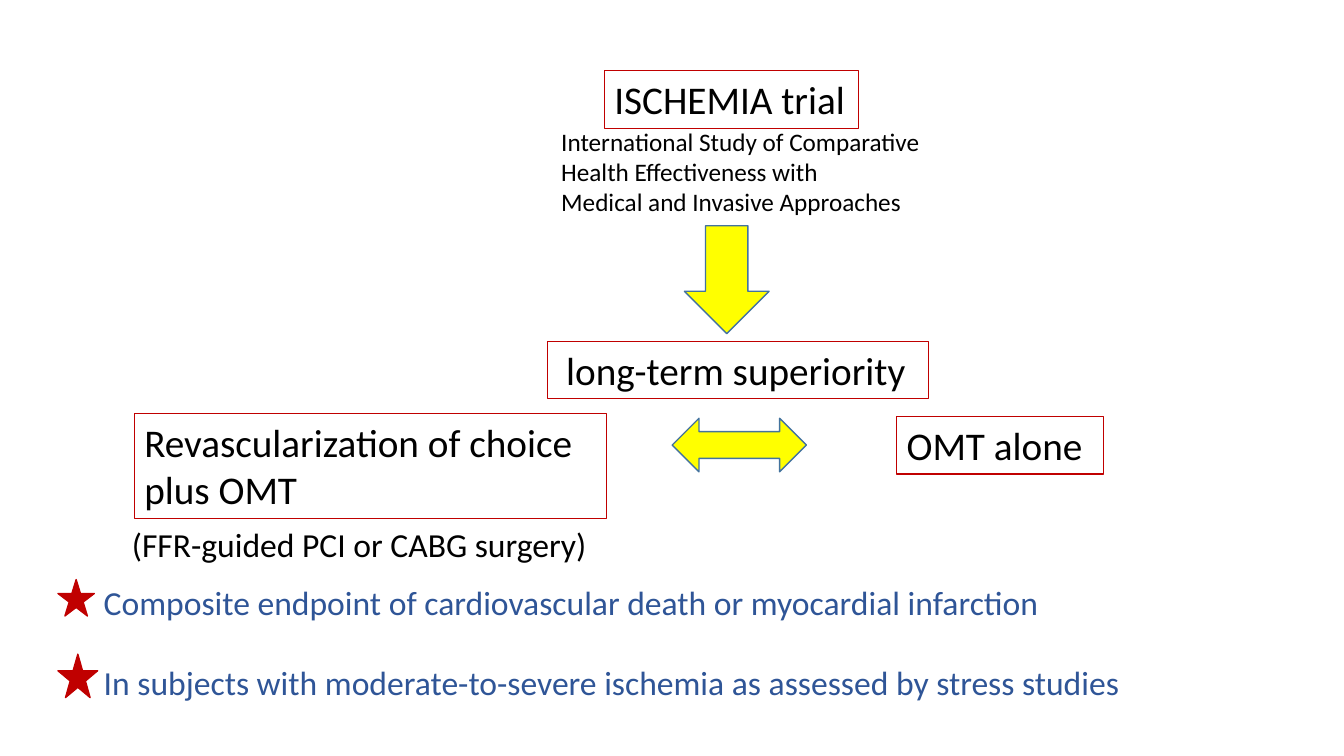
import dataclasses

import pptx
import pptx.dml.color
import pptx.enum.shapes
import pptx.enum.text
import pptx.util

Pt = pptx.util.Pt
RGB = pptx.dml.color.RGBColor.from_string
SHAPE = pptx.enum.shapes.MSO_SHAPE


@dataclasses.dataclass(frozen=True)
class Theme:
    font: str = "Calibri"
    text: str = "000000"
    endpoint: str = "2F5597"
    accent: str = "C00000"
    arrow: str = "FFFF00"
    arrow_edge: str = "43739E"
    box_size: float = 28
    body_size: float = 24
    small_size: float = 18
    box_edge_width: float = 0.75
    symbol_edge_width: float = 1


THEME = Theme()


def add_text(slide, place, lines, size, color=THEME.text, gap=0):
    """Left-aligned lines, with an optional gap in points between them."""
    label = slide.shapes.add_textbox(*map(Pt, place))
    frame = label.text_frame
    frame.word_wrap = True
    frame.auto_size = pptx.enum.text.MSO_AUTO_SIZE.NONE
    frame.text = "\n".join(lines)
    for index, paragraph in enumerate(frame.paragraphs):
        if index:
            paragraph.space_before = Pt(gap)
        font = paragraph.runs[0].font
        font.name = THEME.font
        font.size = Pt(size)
        font.color.rgb = RGB(color)
    return label


def add_framed_text(slide, place, lines):
    box = add_text(slide, place, lines, THEME.box_size)
    box.line.color.rgb = RGB(THEME.accent)
    box.line.width = Pt(THEME.box_edge_width)


def add_symbol(slide, kind, place, fill, edge):
    symbol = slide.shapes.add_shape(kind, *map(Pt, place))
    symbol.shadow.inherit = False
    symbol.fill.solid()
    symbol.fill.fore_color.rgb = RGB(fill)
    symbol.line.color.rgb = RGB(edge)
    symbol.line.width = Pt(THEME.symbol_edge_width)


def main():
    deck = pptx.Presentation()
    deck.slide_width, deck.slide_height = Pt(960), Pt(540)
    slide = deck.slides.add_slide(deck.slide_layouts[6])

    # Trial arms, name and question
    add_framed_text(slide, (96, 295.2, 337, 75),
                    ["Revascularization of choice", "plus OMT"])
    add_framed_text(slide, (640.5, 297.4, 147.6, 41.2), ["OMT alone"])
    add_framed_text(slide, (431.7, 50.3, 181.5, 41.2), ["ISCHEMIA trial"])
    add_framed_text(slide, (391, 243.7, 272.2, 41.2), [" long-term superiority"])

    # Arrows: comparison of arms, and trial to question
    for kind, place in (
        (SHAPE.LEFT_RIGHT_ARROW, (480.2, 298.8, 95.8, 38.2)),
        (SHAPE.DOWN_ARROW, (488.9, 161.3, 60.5, 77)),
    ):
        add_symbol(slide, kind, place, THEME.arrow, THEME.arrow_edge)

    # Explanations
    add_text(slide, (87.1, 370.8, 349.2, 36),
             ["(FFR-guided PCI or CABG surgery)"], THEME.body_size)
    add_text(slide, (393.8, 86.4, 277.2, 72.7),
             ["International Study of Comparative",
              "Health Effectiveness with",
              "Medical and Invasive Approaches"], THEME.small_size)

    # Endpoint and population, each marked by a star
    add_text(slide, (67, 411.8, 874.8, 94.3),
             ["Composite endpoint of cardiovascular death or myocardial infarction",
              "In subjects with moderate-to-severe ischemia as assessed by stress studies"],
             THEME.body_size, THEME.endpoint, gap=29)
    for place in ((41.4, 467.3, 28.4, 31), (41.4, 414, 26, 26)):
        add_symbol(slide, SHAPE.STAR_5_POINT, place, THEME.accent, THEME.accent)

    deck.save("out.pptx")


if __name__ == "__main__":
    main()
